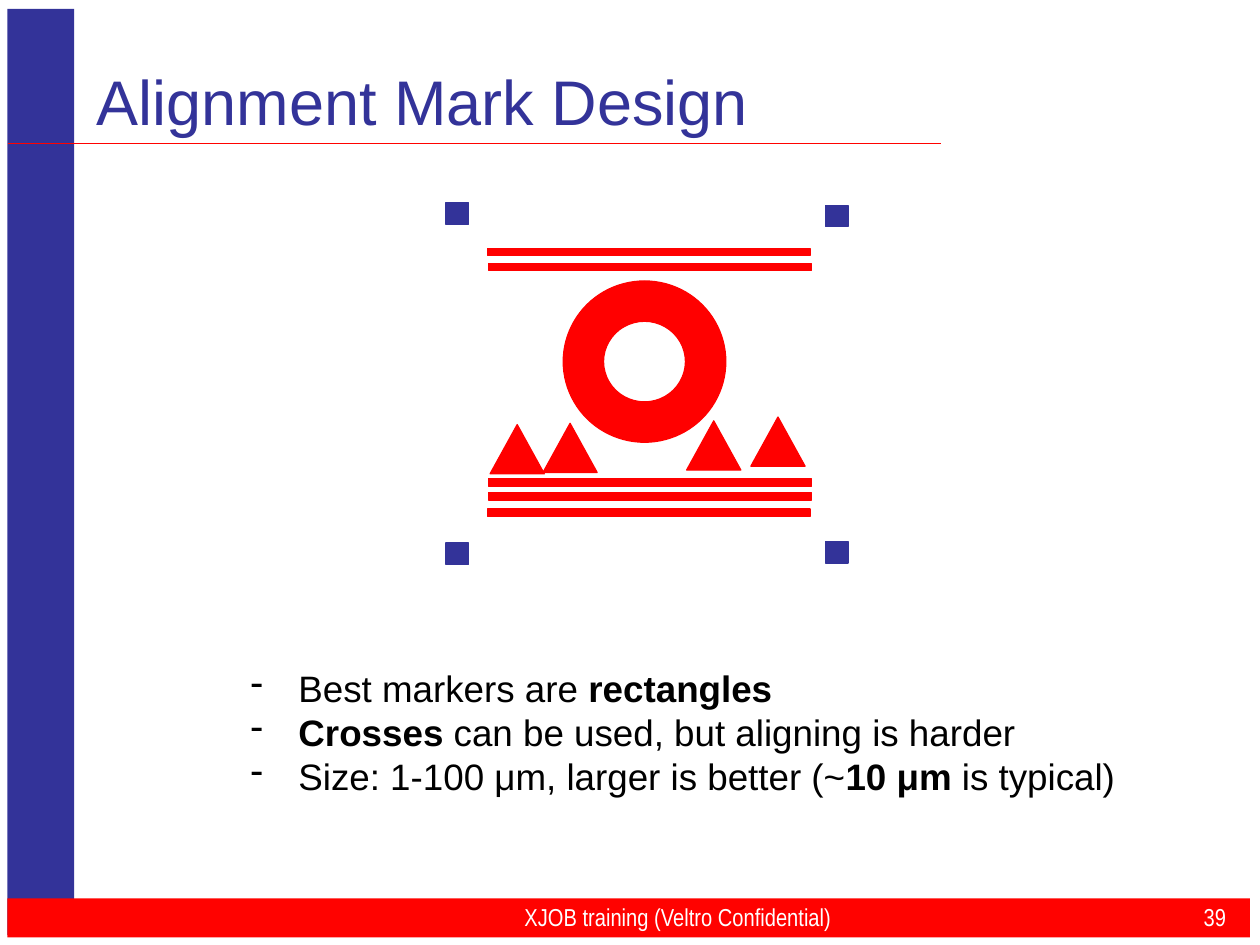
from dataclasses import dataclass

from lxml.etree import SubElement
from pptx import Presentation
from pptx.dml.color import RGBColor
from pptx.enum.shapes import MSO_CONNECTOR, MSO_SHAPE as Preset
from pptx.enum.text import MSO_ANCHOR as Anchor, PP_ALIGN as Align
from pptx.oxml.ns import qn
from pptx.util import Inches, Pt


@dataclass(frozen=True)
class Theme:
    blue = RGBColor(0x33, 0x33, 0x99)
    band_red = RGBColor(0xFF, 0x02, 0x00)
    mark_red = RGBColor(0xFF, 0x00, 0x00)
    black = RGBColor(0, 0, 0)
    white = RGBColor(0xFF, 0xFF, 0xFF)
    font = "Arial"
    narrow = "Arial Narrow"
    title_size = 36
    body_size = 21
    body_leading = 25.1
    footer_size = 14


THEME = Theme()
WIDTH, HEIGHT = 10, 7.5

TITLE = "Alignment Mark Design"
FOOTER = "XJOB training (Veltro Confidential)"
PAGE_NUMBER = "39"
# Each bullet is a list of (text, bold) runs.
BULLETS = [
    [("Best markers are ", False), ("rectangles", True)],
    [("Crosses", True), (" can be used, but aligning is harder", False)],
    [("Size: 1-100 μm, larger is better (~", False), ("10 μm", True),
     (" is typical)", False)],
]

# Pattern parts: preset, colour, size, top-left corners
PATTERN = [
    (Preset.RECTANGLE, THEME.mark_red, (2.56, 0.06),
     [(3.88, 2.09), (3.87, 1.97), (3.87, 4.04), (3.88, 3.91), (3.88, 3.8)]),
    (Preset.ISOSCELES_TRIANGLE, THEME.mark_red, (0.43, 0.39),
     [(3.89, 3.37), (4.31, 3.36), (5.96, 3.31), (5.45, 3.34)]),
    (Preset.DONUT, THEME.mark_red, (1.29, 1.28), [(4.47, 2.23)]),
    (Preset.RECTANGLE, THEME.blue, (0.18, 0.17),
     [(3.54, 4.31), (6.55, 4.3), (6.55, 1.63), (3.54, 1.61)]),
]


def add_shape(slide, preset, box, color, outlined=True):
    shape = slide.shapes.add_shape(preset, *map(Inches, box))
    shape.shadow.inherit = False
    shape.fill.solid()
    shape.fill.fore_color.rgb = color
    if outlined:
        shape.line.color.rgb = color
        shape.line.width = Pt(0.75)
    else:
        shape.line.fill.background()


def add_rule(slide, left, right, y):
    rule = slide.shapes.add_connector(
        MSO_CONNECTOR.STRAIGHT, *map(Inches, (left, y, right, y)))
    rule.line.color.rgb = THEME.band_red
    rule.line.width = Pt(1)
    SubElement(rule._element.spPr, qn("a:effectLst"))


def add_frame(slide, box, anchor):
    frame = slide.shapes.add_textbox(*map(Inches, box)).text_frame
    frame.word_wrap = True
    frame.vertical_anchor = anchor
    return frame


def style(paragraph, name, size, color):
    paragraph.font.name = name
    paragraph.font.size = Pt(size)
    paragraph.font.color.rgb = color


def add_label(slide, text, box, align, *font):
    paragraph = add_frame(slide, box, Anchor.MIDDLE).paragraphs[0]
    paragraph.text = text
    paragraph.alignment = align
    style(paragraph, *font)


def add_dash(paragraph, indent=0.38):
    """Give the paragraph a hanging dash bullet."""
    properties = paragraph._p.get_or_add_pPr()
    properties.set("marL", str(Inches(indent)))
    properties.set("indent", str(-Inches(indent)))
    SubElement(properties, qn("a:buChar"), char="-")


def add_bullets(slide, box):
    frame = add_frame(slide, box, Anchor.TOP)
    for index, runs in enumerate(BULLETS):
        paragraph = frame.add_paragraph() if index else frame.paragraphs[0]
        add_dash(paragraph)
        paragraph.line_spacing = Pt(THEME.body_leading)
        style(paragraph, THEME.font, THEME.body_size, THEME.black)
        for text, bold in runs:
            run = paragraph.add_run()
            run.text = text
            run.font.bold = bold


def main():
    presentation = Presentation()
    presentation.slide_width = Inches(WIDTH)
    presentation.slide_height = Inches(HEIGHT)
    slide = presentation.slides.add_slide(presentation.slide_layouts[6])

    edge = 0.06
    add_shape(slide, Preset.RECTANGLE, (edge, 0.07, 0.53, 7.35), THEME.blue, False)
    add_shape(slide, Preset.RECTANGLE, (edge, 7.13, 9.86, 0.31), THEME.band_red, False)
    add_rule(slide, edge, 7.47, 1.14)

    add_label(slide, TITLE, (0.67, 0.42, 6.92, 0.75), Align.LEFT,
              THEME.font, THEME.title_size, THEME.blue)
    footer_font = (THEME.narrow, THEME.footer_size, THEME.white)
    add_label(slide, FOOTER, (2.67, 7.15, 5.42, 0.25), Align.CENTER, *footer_font)
    add_label(slide, PAGE_NUMBER, (9, 7.15, 0.83, 0.25), Align.RIGHT, *footer_font)

    for preset, color, size, corners in PATTERN:
        for corner in corners:
            add_shape(slide, preset, corner + size, color)

    add_bullets(slide, (1.89, 5.24, 8.58, 1.16))
    presentation.save("out.pptx")


if __name__ == "__main__":
    main()
